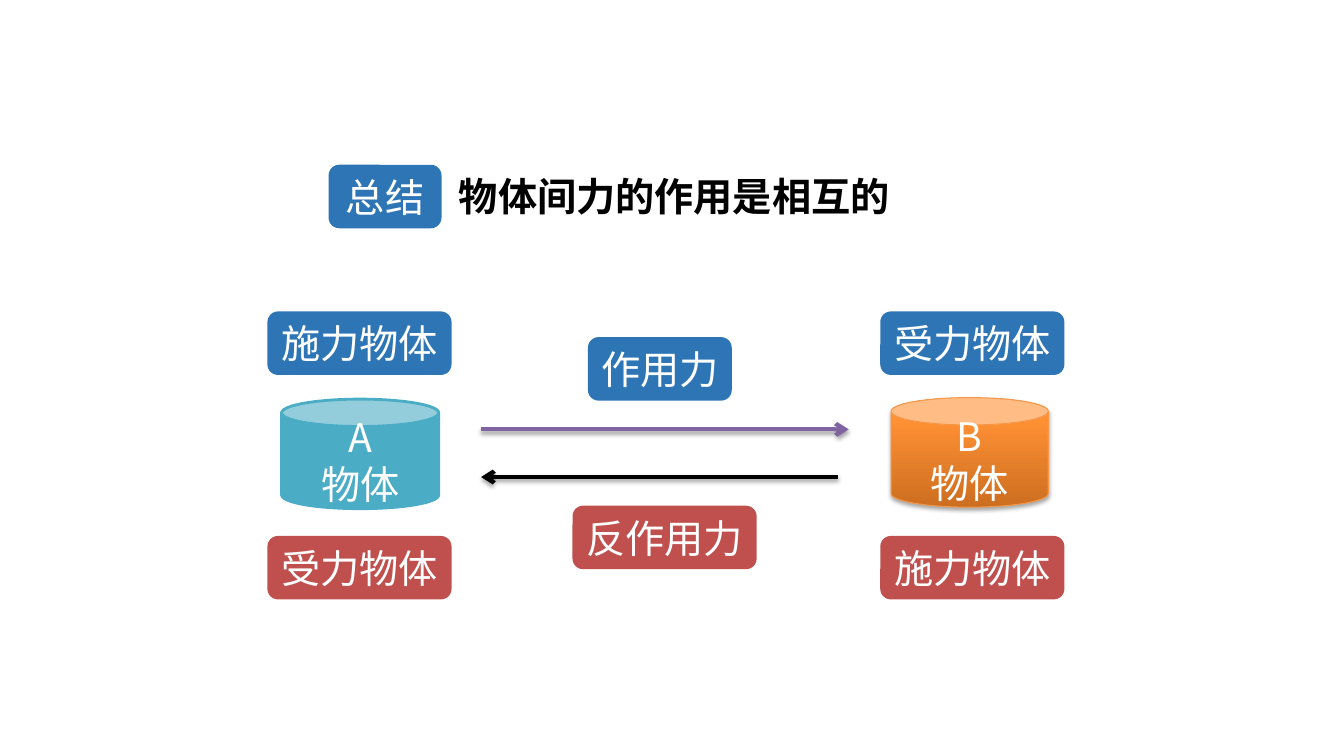
from dataclasses import dataclass

from lxml.etree import SubElement
from pptx import Presentation
from pptx.dml.color import RGBColor
from pptx.enum.shapes import MSO_CONNECTOR, MSO_SHAPE
from pptx.enum.text import MSO_ANCHOR, MSO_AUTO_SIZE, PP_ALIGN
from pptx.oxml.ns import qn
from pptx.util import Emu, Inches, Pt

FONT = "Noto Sans CJK SC"
WHITE, BLACK = "FFFFFF", "000000"
BLUE, RED, TEAL, ORANGE, PURPLE = "2E75B6", "C0504D", "4BACC6", "F79646", "8064A2"
ORANGE_STOPS = ((0, "CC6E20"), (80, "FF9034"), (100, "FF9136"))
SLIDE_WIDTH, SLIDE_HEIGHT = Inches(13.333), Inches(7.5)
TAG_HEIGHT = 8.4
LEFT_COLUMN, RIGHT_COLUMN = 19.9, 65.5
WIDE_TAG = 13.7
UPPER_ROW, LOWER_ROW = 41.2, 70.9


@dataclass(frozen=True)
class Tag:
    text: str
    left: float
    top: float
    width: float
    fill: str


@dataclass(frozen=True)
class Body:
    letter: str
    left: float
    top: float
    fill: str
    line_width: float
    stops: tuple = ()


@dataclass(frozen=True)
class Force:
    start: float
    end: float
    row: float
    color: str


TAGS = (
    Tag("总结", 24.45, 21.8, 8.4, BLUE),
    Tag("施力物体", LEFT_COLUMN, UPPER_ROW, WIDE_TAG, BLUE),
    Tag("受力物体", RIGHT_COLUMN, UPPER_ROW, WIDE_TAG, BLUE),
    Tag("作用力", 43.75, 44.6, 10.7, BLUE),
    Tag("反作用力", 42.6, 66.9, WIDE_TAG, RED),
    Tag("受力物体", LEFT_COLUMN, LOWER_ROW, WIDE_TAG, RED),
    Tag("施力物体", RIGHT_COLUMN, LOWER_ROW, WIDE_TAG, RED),
)
BODIES = (
    Body("A", 20.95, 52.8, TEAL, 2),
    Body("B", 66.3, 52.6, ORANGE, 0.75, ORANGE_STOPS),
)
FORCES = (
    Force(35.8, 63.15, 56.8, PURPLE),
    Force(62.35, 35.8, 63.1, BLACK),
)


def across(percent: float) -> Emu:
    return Emu(round(SLIDE_WIDTH * percent / 100))


def down(percent: float) -> Emu:
    return Emu(round(SLIDE_HEIGHT * percent / 100))


def rgb(value: str) -> RGBColor:
    return RGBColor.from_string(value)


def write(shape, lines, color=WHITE, align=PP_ALIGN.CENTER, bold=False, wrap=False) -> None:
    frame = shape.text_frame
    frame.word_wrap = wrap
    frame.auto_size = MSO_AUTO_SIZE.NONE
    frame.vertical_anchor = MSO_ANCHOR.MIDDLE
    for index, line in enumerate(lines):
        para = frame.add_paragraph() if index else frame.paragraphs[0]
        para.alignment = align
        span = para.add_run()
        span.text = line
        span.font.size = Pt(28)
        span.font.bold = bold
        span.font.name = FONT
        span.font.color.rgb = rgb(color)
        SubElement(span.font._element, qn("a:ea"), typeface=FONT)


def add_shadow(properties) -> None:
    effects = properties.find(qn("a:effectLst"))
    if effects is None:
        effects = SubElement(properties, qn("a:effectLst"))
    shadow = SubElement(effects, qn("a:outerShdw"), blurRad=str(Pt(3.1)),
                        dist=str(Pt(1.8)), dir="5400000", rotWithShape="0")
    shade = SubElement(shadow, qn("a:srgbClr"), val=BLACK)
    SubElement(shade, qn("a:alpha"), val="35000")


def fill_gradient(shape, stops) -> None:
    shape.fill.gradient()
    shape.fill.gradient_angle = 90
    stop_list = shape._element.spPr.find(f".//{qn('a:gsLst')}")
    for stop in list(stop_list):
        stop_list.remove(stop)
    for position, color in stops:
        stop = SubElement(stop_list, qn("a:gs"), pos=str(position * 1000))
        SubElement(stop, qn("a:srgbClr"), val=color)


def add_tag(page, tag: Tag) -> None:
    box = page.shapes.add_shape(MSO_SHAPE.ROUNDED_RECTANGLE, across(tag.left), down(tag.top),
                                across(tag.width), down(TAG_HEIGHT))
    box.shadow.inherit = False
    box.fill.solid()
    box.fill.fore_color.rgb = rgb(tag.fill)
    box.line.fill.background()
    write(box, [tag.text])


def add_body(page, body: Body) -> None:
    can = page.shapes.add_shape(MSO_SHAPE.CAN, across(body.left), down(body.top),
                                across(11.7), down(14.5))
    can.line.color.rgb = rgb(body.fill)
    can.line.width = Pt(body.line_width)
    can.shadow.inherit = False
    if body.stops:
        fill_gradient(can, body.stops)
        add_shadow(can._element.spPr)
    else:
        can.fill.solid()
        can.fill.fore_color.rgb = rgb(body.fill)
    write(can, [body.letter, "物体"], wrap=True)


def add_force(page, force: Force) -> None:
    arrow = page.shapes.add_connector(MSO_CONNECTOR.STRAIGHT, across(force.start), down(force.row),
                                      across(force.end), down(force.row))
    arrow.line.color.rgb = rgb(force.color)
    arrow.line.width = Pt(3)
    properties = arrow._element.spPr
    SubElement(properties.find(qn("a:ln")), qn("a:tailEnd"), type="arrow")
    add_shadow(properties)


def add_title(page) -> None:
    title = page.shapes.title
    title.left, title.top = across(33.4), down(22.1)
    title.width, title.height = across(33.9), down(7.6)
    write(title, ["物体间力的作用是相互的"], BLACK, PP_ALIGN.LEFT, bold=True)


def main() -> None:
    deck = Presentation()
    deck.slide_width, deck.slide_height = SLIDE_WIDTH, SLIDE_HEIGHT
    page = deck.slides.add_slide(deck.slide_layouts[5])
    add_title(page)
    for tag in TAGS:
        add_tag(page, tag)
    for body in BODIES:
        add_body(page, body)
    for force in FORCES:
        add_force(page, force)
    deck.save("out.pptx")


if __name__ == "__main__":
    main()
